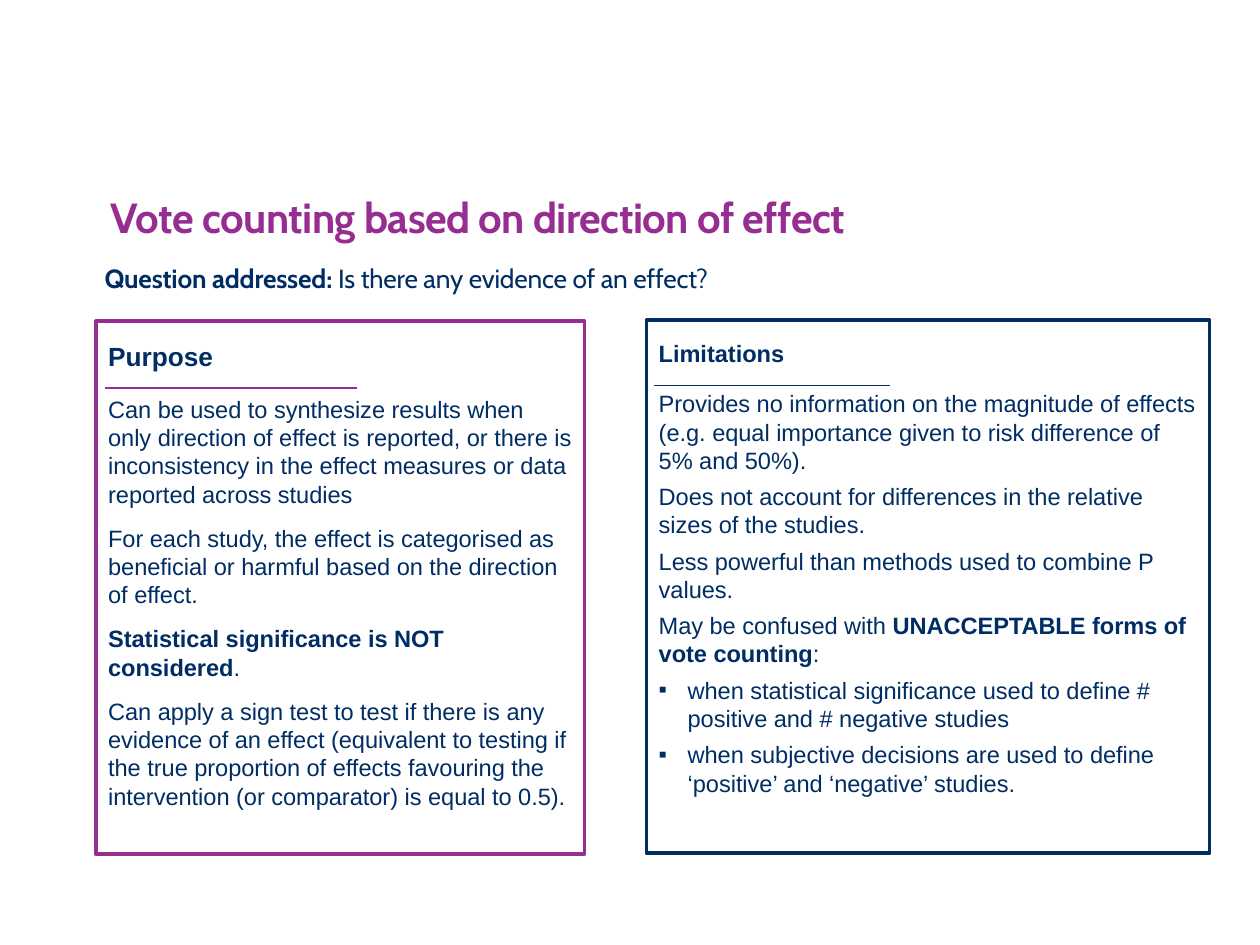
from dataclasses import dataclass

import pptx
import pptx.dml.color
import pptx.enum.shapes
import pptx.enum.text
import pptx.oxml.ns
import pptx.util
from lxml import etree

Inches = pptx.util.Inches
Pt = pptx.util.Pt
qn = pptx.oxml.ns.qn
Anchor = pptx.enum.text.MSO_ANCHOR

COLOURS = {"purple": "962D91", "navy": "002D64"}
BODY_SIZE = 13.5
BODY_GAP = 4.5


@dataclass
class Passage:
    """A paragraph as (text, bold) pieces."""
    pieces: list[tuple[str, bool]]
    size: float = BODY_SIZE
    before: float = BODY_GAP
    after: float = 0
    bullet: bool = False


@dataclass
class Panel:
    left: float
    top: float
    width: float
    rule_left: float
    rule_top: float
    rule_width: float
    colour: str
    passages: list[Passage]


def colour(name: str) -> pptx.dml.color.RGBColor:
    return pptx.dml.color.RGBColor.from_string(COLOURS[name])


def write_passage(paragraph, passage: Passage, ink: str = "navy",
                  font: str = "Arial", tracking: float = 0) -> None:
    paragraph.alignment = pptx.enum.text.PP_ALIGN.LEFT
    paragraph.space_before = Pt(passage.before)
    paragraph.space_after = Pt(passage.after)
    if passage.bullet:
        properties = paragraph._p.get_or_add_pPr()
        properties.set("marL", str(Inches(0.23)))
        properties.set("indent", str(Inches(-0.23)))
        etree.SubElement(properties, qn("a:buFont"), typeface="Arial")
        etree.SubElement(properties, qn("a:buChar"), char="▪")
    for text, bold in passage.pieces:
        run = paragraph.add_run()
        run.text = text
        run.font.name = font
        run.font.size = Pt(passage.size)
        run.font.bold = bold
        run.font.color.rgb = colour(ink)
        if tracking:
            run._r.get_or_add_rPr().set("spc", str(round(tracking * 100)))


def set_frame(frame, insets: tuple[float, ...], anchor) -> None:
    frame.word_wrap = True
    frame.vertical_anchor = anchor
    (frame.margin_left, frame.margin_top,
     frame.margin_right, frame.margin_bottom) = map(Inches, insets)


def add_heading(slide, box: tuple[float, ...], passage: Passage, ink: str,
                tracking: float, anchor) -> None:
    frame = slide.shapes.add_textbox(*map(Inches, box)).text_frame
    set_frame(frame, (0, 0, 0, 0), anchor)
    write_passage(frame.paragraphs[0], passage, ink, "Cabin", tracking)


def add_panel(slide, panel: Panel) -> None:
    group = slide.shapes.add_group_shape()

    # Outlined box with its text
    box = group.shapes.add_shape(
        pptx.enum.shapes.MSO_SHAPE.RECTANGLE, Inches(panel.left),
        Inches(panel.top), Inches(panel.width), Inches(4.23))
    box.shadow.inherit = False
    box.fill.background()
    box.line.color.rgb = colour(panel.colour)
    box.line.width = Pt(2)
    frame = box.text_frame
    set_frame(frame, (0.1, 0.15, 0.1, 0.05), Anchor.TOP)
    for index, passage in enumerate(panel.passages):
        paragraph = frame.add_paragraph() if index else frame.paragraphs[0]
        write_passage(paragraph, passage)

    # Rule under the panel heading
    rule = group.shapes.add_connector(
        pptx.enum.shapes.MSO_CONNECTOR.STRAIGHT,
        Inches(panel.rule_left), Inches(panel.rule_top),
        Inches(panel.rule_left + panel.rule_width), Inches(panel.rule_top))
    rule.line.color.rgb = colour(panel.colour)
    rule.line.width = Pt(0.75)
    etree.SubElement(rule._element.spPr, qn("a:effectLst"))


PURPOSE = [
    Passage([("Purpose", True)], size=15, before=0, after=8.5),
    Passage([("Can be used to synthesize results when only direction of "
              "effect is reported, or there is inconsistency in the effect "
              "measures or data reported across studies", False)],
            after=BODY_GAP),
    Passage([("For each study, the effect is categorised as beneficial or "
              "harmful based on the direction of effect.", False)],
            after=BODY_GAP),
    Passage([("Statistical significance is NOT considered", True),
             (".", False)], after=BODY_GAP),
    Passage([("Can apply a sign test to test if there is any evidence of an "
              "effect (equivalent to testing if the true proportion of "
              "effects favouring the intervention (or comparator) is equal "
              "to 0.5).", False)], after=BODY_GAP),
]

LIMITATIONS = [
    Passage([("Limitations", True)], before=0, after=8),
    Passage([("Provides no information on the magnitude of effects (e.g. "
              "equal importance given to risk difference of 5% and 50%).",
              False)]),
    Passage([("Does not account for differences in the relative sizes of "
              "the studies.", False)]),
    Passage([("Less powerful than methods used to combine P values.",
              False)]),
    Passage([("May be confused with ", False),
             ("UNACCEPTABLE forms of vote counting", True), (":", False)]),
    Passage([("when statistical significance used to define # positive and "
              "# negative studies", False)], bullet=True),
    Passage([("when subjective decisions are used to define ‘positive’ and "
              "‘negative’ studies.", False)], bullet=True),
]

PANELS = [
    Panel(0.76, 2.55, 3.88, 0.83, 3.08, 2, "purple", PURPOSE),
    Panel(5.13, 2.54, 4.47, 5.19, 3.06, 1.87, "navy", LIMITATIONS),
]


def main() -> None:
    presentation = pptx.Presentation()
    presentation.slide_width = Inches(10)
    presentation.slide_height = Inches(7.5)
    slide = presentation.slides.add_slide(presentation.slide_layouts[6])

    # Title and question
    add_heading(slide, (0.88, 1.4, 6.69, 0.52),
                Passage([("Vote counting based on direction of effect", True)],
                        size=24, before=0),
                "purple", -0.3, Anchor.BOTTOM)
    add_heading(slide, (0.83, 2.08, 9.08, 3.21),
                Passage([("Question addressed: ", True),
                         ("Is there any evidence of an effect?", False)],
                        size=15, before=0),
                "navy", -0.1, Anchor.TOP)

    # Purpose and limitations side by side
    for panel in PANELS:
        add_panel(slide, panel)

    presentation.save("out.pptx")


if __name__ == "__main__":
    main()
